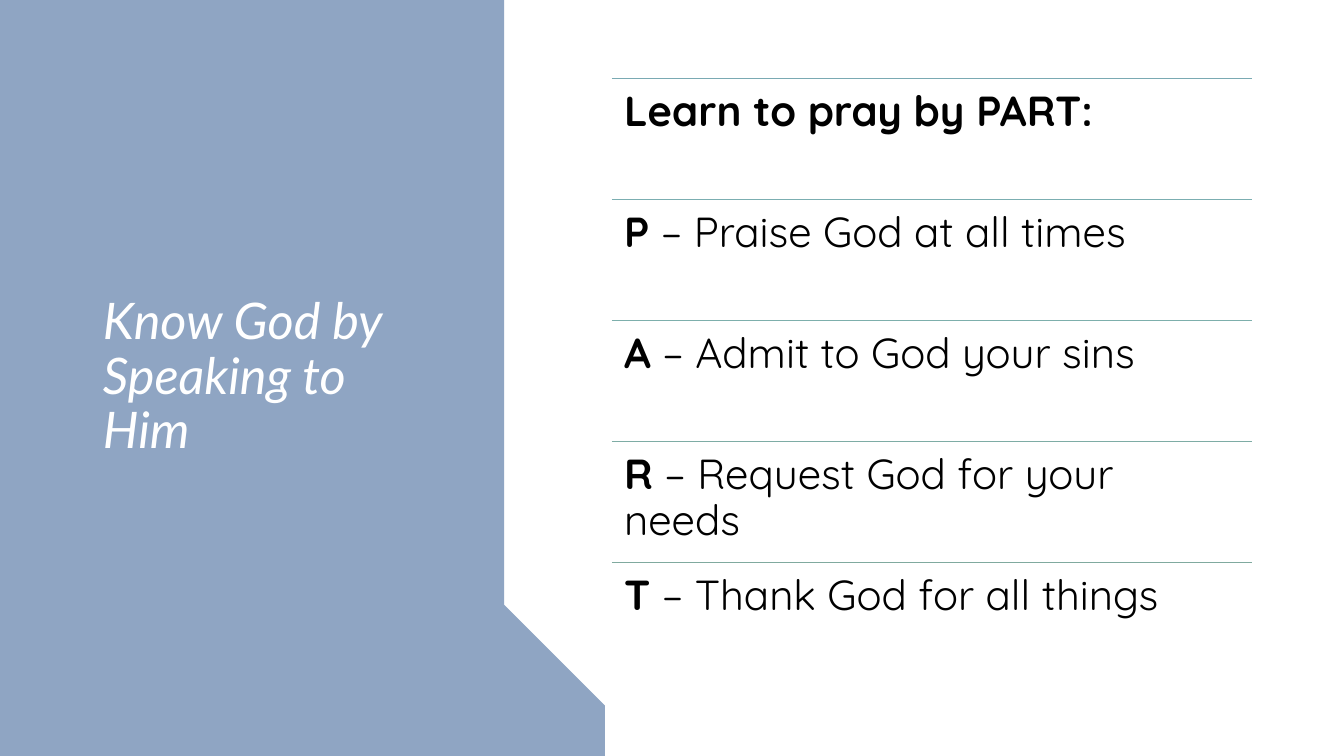
from lxml.etree import SubElement
from pptx import Presentation
from pptx.dml.color import RGBColor
from pptx.enum.shapes import MSO_CONNECTOR
from pptx.enum.text import MSO_ANCHOR, MSO_AUTO_SIZE, PP_ALIGN
from pptx.oxml.ns import qn
from pptx.util import Inches, Pt

WHITE = RGBColor(0xFF, 0xFF, 0xFF)
BLACK = RGBColor(0, 0, 0)
BLUE = RGBColor(0x8F, 0xA5, 0xC3)

ROWS = [
    ("Learn to pray by PART:", "", RGBColor(0x7A, 0xAA, 0xB3)),
    ("P", " – Praise God at all times", RGBColor(0x7B, 0xAE, 0xB1)),
    ("A", " – Admit to God your sins", RGBColor(0x7D, 0xAF, 0xAC)),
    ("R", " – Request God for your needs", RGBColor(0x7E, 0xAC, 0xA5)),
    ("T", " – Thank God for all things", RGBColor(0x80, 0xAA, 0x9F)),
]
ROW_LEFT, ROW_TOP, ROW_WIDTH, ROW_HEIGHT = 6.07, 0.78, 6.35, 1.2

TORN_EDGE = [
    (5.11, 0), (5.03, 0.08), (5, 0.36), (5.08, 0.5), (5.21, 0.9),
    (5.09, 0.98), (5.09, 1.32), (5.28, 1.59), (5.08, 1.61), (5.06, 1.75),
    (4.95, 1.81), (4.9, 2.15), (5.03, 2.37), (5.14, 2.76), (4.84, 2.88),
    (4.87, 3.07), (4.71, 3.1), (4.73, 3.3), (4.61, 3.44), (4.53, 3.71),
    (4.68, 3.94), (4.56, 4.14), (4.69, 4.22), (4.55, 4.39), (4.62, 4.73),
    (4.81, 4.92), (5.14, 5.45), (5.27, 5.97), (5.38, 6.26), (5.29, 6.28),
    (5.34, 6.48), (5.58, 6.81), (5.65, 7), (5.98, 7.5),
]


def add_torn_panel(slide):
    builder = slide.shapes.build_freeform(0, 0, scale=Inches(1))
    builder.add_line_segments(TORN_EDGE + [(0, 7.5)], close=True)
    panel = builder.convert_to_shape()
    panel.shadow.inherit = False
    panel.fill.solid()
    panel.fill.fore_color.rgb = BLUE
    panel.line.fill.background()


def add_run(paragraph, text, *, font, size, color, bold=False, italic=False):
    run = paragraph.add_run()
    run.text = text
    run.font.name = font
    run.font.size = Pt(size)
    run.font.color.rgb = color
    run.font.bold = bold
    run.font.italic = italic


def add_title(slide, text):
    title = slide.shapes.title
    title.element.getparent().append(title.element)
    title.left, title.top = Inches(0.92), Inches(0.78)
    title.width, title.height = Inches(3.5), Inches(5.94)
    frame = title.text_frame
    frame.word_wrap = True
    frame.auto_size = MSO_AUTO_SIZE.NONE
    frame.vertical_anchor = MSO_ANCHOR.MIDDLE
    paragraph = frame.paragraphs[0]
    paragraph.alignment = PP_ALIGN.LEFT
    paragraph.line_spacing = 0.9
    add_run(paragraph, text, font="Lato", size=36, color=WHITE, italic=True)


def add_rule(slide, top, color):
    left, right = Inches(ROW_LEFT), Inches(ROW_LEFT + ROW_WIDTH)
    rule = slide.shapes.add_connector(
        MSO_CONNECTOR.STRAIGHT, left, Inches(top), right, Inches(top))
    rule.line.color.rgb = color
    rule.line.width = Pt(1)
    SubElement(rule.element.spPr, qn("a:effectLst"))


def add_row(slide, top, lead, rest):
    box = slide.shapes.add_textbox(
        Inches(ROW_LEFT), Inches(top), Inches(ROW_WIDTH), Inches(ROW_HEIGHT))
    frame = box.text_frame
    frame.word_wrap = True
    frame.margin_left = frame.margin_right = Inches(0.12)
    frame.margin_top = frame.margin_bottom = Inches(0.12)
    paragraph = frame.paragraphs[0]
    paragraph.line_spacing = 0.9
    add_run(paragraph, lead, font="Quicksand", size=30, color=BLACK, bold=True)
    if rest:
        add_run(paragraph, rest, font="Quicksand", size=30, color=BLACK)


def main():
    presentation = Presentation()
    presentation.slide_width, presentation.slide_height = Inches(13.33), Inches(7.5)
    slide = presentation.slides.add_slide(presentation.slide_layouts[5])
    slide.background.fill.solid()
    slide.background.fill.fore_color.rgb = WHITE

    add_torn_panel(slide)
    add_title(slide, "Know God by Speaking to Him")
    for index, (lead, rest, color) in enumerate(ROWS):
        top = ROW_TOP + index * ROW_HEIGHT
        add_rule(slide, top, color)
        add_row(slide, top, lead, rest)
    presentation.save("out.pptx")


if __name__ == "__main__":
    main()
